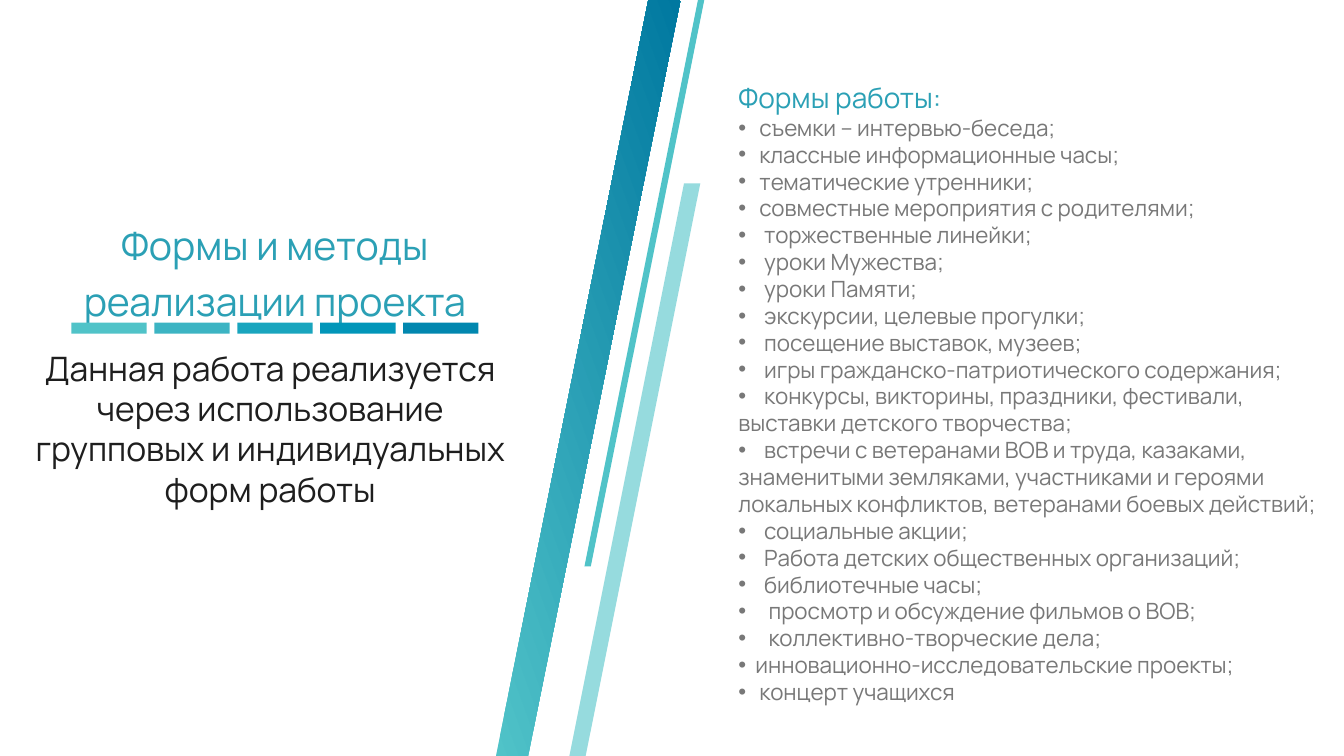
from dataclasses import dataclass

from lxml import etree
from pptx import Presentation
from pptx.dml.color import RGBColor
from pptx.enum.shapes import MSO_SHAPE
from pptx.enum.text import MSO_AUTO_SIZE, PP_ALIGN
from pptx.oxml.ns import qn
from pptx.util import Cm, Pt

RECTANGLE = MSO_SHAPE.RECTANGLE
CENTER = PP_ALIGN.CENTER
GROW = MSO_AUTO_SIZE.SHAPE_TO_FIT_TEXT


@dataclass(frozen=True)
class Theme:
    font: str = "Manrope"
    heading: str = "2BA0B5"
    body: str = "1E1E1E"
    muted: str = "787878"
    teal: str = "50C3C8"
    deep: str = "0078A0"
    pale: str = "96DBDE"
    bars: tuple = ("50C3C8", "3CB4C3", "19A5BE", "0196B9", "0187AF")
    title_size: int = 28
    text_size: int = 24
    list_heading_size: int = 20
    list_size: int = 16


THEME = Theme()

TITLE = "Формы и методы реализации проекта"
SUMMARY = ("Данная работа реализуется через использование групповых "
           "и индивидуальных форм работы")
LIST_HEADING = "Формы работы:"

# Gap after the bullet in centimetres, then the items that use it
WORK_FORMS = [
    (0.53, ["съемки – интервью-беседа;",
            "классные информационные часы;",
            "тематические утренники;",
            "совместные мероприятия с родителями;"]),
    (0.65, ["торжественные линейки;",
            "уроки Мужества;",
            "уроки Памяти;",
            "экскурсии, целевые прогулки;",
            "посещение выставок, музеев;",
            "игры гражданско-патриотического содержания;",
            "конкурсы, викторины, праздники, фестивали, "
            "выставки детского творчества;",
            "встречи с ветеранами ВОВ и труда, казаками, знаменитыми "
            "земляками, участниками и героями локальных конфликтов, "
            "ветеранами боевых действий;",
            "социальные акции;",
            "Работа детских общественных организаций;",
            "библиотечные часы;"]),
    (0.76, ["просмотр и обсуждение фильмов о ВОВ;",
            "коллективно-творческие дела;"]),
    (0.43, ["инновационно-исследовательские проекты;"]),
    (0.53, ["концерт учащихся"]),
]


def paint(shape, color):
    shape.shadow.inherit = False
    shape.line.fill.background()
    shape.fill.solid()
    shape.fill.fore_color.rgb = RGBColor.from_string(color)


def add_text_frame(page, box, **settings):
    frame = page.shapes.add_textbox(*map(Cm, box)).text_frame
    for name, value in {"word_wrap": True, "auto_size": GROW, **settings}.items():
        setattr(frame, name, value)
    return frame


def write(para, text, size, color, **settings):
    for name, value in settings.items():
        setattr(para, name, value)
    span = para.add_run()
    span.text = text
    for name, value in {"name": THEME.font, "size": Pt(size)}.items():
        setattr(span.font, name, value)
    span.font.color.rgb = RGBColor.from_string(color)


def add_bullet(para, gap):
    """Bullet at the left edge; a tab stop sets where its text begins."""
    properties = para._p.get_or_add_pPr()
    for name in ("marL", "indent"):
        properties.set(name, "0")
    stops = etree.Element(qn("a:tabLst"))
    etree.SubElement(stops, qn("a:tab"), pos=str(Cm(gap)), algn="l")
    etree.SubElement(properties, qn("a:buFont"), typeface="Arial")
    etree.SubElement(properties, qn("a:buChar"), char="•")
    properties.append(stops)


def add_stripe(page, box, thickness, color):
    """Slanted stripe from the top right to the bottom left of its box."""
    left, top, width, height = box
    right, bottom = left + width, top + height
    corners = [(right - thickness, top), (right, top),
               (left + thickness, bottom), (left, bottom)]
    points = [(Cm(x), Cm(y)) for x, y in corners]
    builder = page.shapes.build_freeform(*points[0])
    builder.add_line_segments(points[1:], close=True)
    stripe = builder.convert_to_shape()
    paint(stripe, color)
    return stripe


def add_divider(page, box):
    left, top, width, height = box
    # Wide gradient stripe over the full height
    wide = add_stripe(page, (left, top, 4.65, height), 0.81, THEME.teal)
    wide.fill.gradient()
    wide.fill.gradient_angle = 20
    for stop, color in zip(wide.fill.gradient_stops, (THEME.teal, THEME.deep)):
        stop.color.rgb = RGBColor.from_string(color)
    # Thin stripe from the top, pale stripe to the bottom
    add_stripe(page, (left + 2.23, top, 3.02, 14.27), 0.16, THEME.teal)
    add_stripe(page, (left + 1.85, top + 4.62, 3.3, height - 4.62), 0.41, THEME.pale)


def add_work_forms(page, box):
    frame = add_text_frame(page, box)
    write(frame.paragraphs[0], LIST_HEADING, THEME.list_heading_size, THEME.heading)
    for gap, items in WORK_FORMS:
        for item in items:
            para = frame.add_paragraph()
            add_bullet(para, gap)
            write(para, "\t" + item, THEME.list_size, THEME.muted)


def add_bars(page, box):
    left, top, width, height = box
    bar_width = 1.9
    pitch = (width - bar_width) / (len(THEME.bars) - 1)
    for index, color in enumerate(THEME.bars):
        place = (left + index * pitch, top, bar_width, height)
        paint(page.shapes.add_shape(RECTANGLE, *map(Cm, place)), color)


def add_intro(page, box):
    left, top, width, height = box
    # Title
    title = add_text_frame(page, (left + 1.12, top, 11.15, 3.84))
    write(title.paragraphs[0], TITLE, THEME.title_size, THEME.heading,
          alignment=CENTER, line_spacing=1.2)
    # Summary, without insets
    summary = add_text_frame(page, (left, top + 3.55, width, height - 3.55),
                             margin_left=0, margin_top=0,
                             margin_right=0, margin_bottom=0)
    write(summary.paragraphs[0], SUMMARY, THEME.text_size, THEME.body,
          alignment=CENTER)
    # Row of bars under the title
    add_bars(page, (left + 1.57, top + 2.92, 10.26, 0.28))


def main():
    deck = Presentation()
    deck.slide_width, deck.slide_height = Cm(33.87), Cm(19.05)
    page = deck.slides.add_slide(deck.slide_layouts[6])
    add_divider(page, (12.5, 0, 5.25, 19.05))
    add_work_forms(page, (18.36, 1.9, 15.16, 16.15))
    add_intro(page, (0.23, 5.21, 13.16, 6.62))
    deck.save("out.pptx")


if __name__ == "__main__":
    main()
